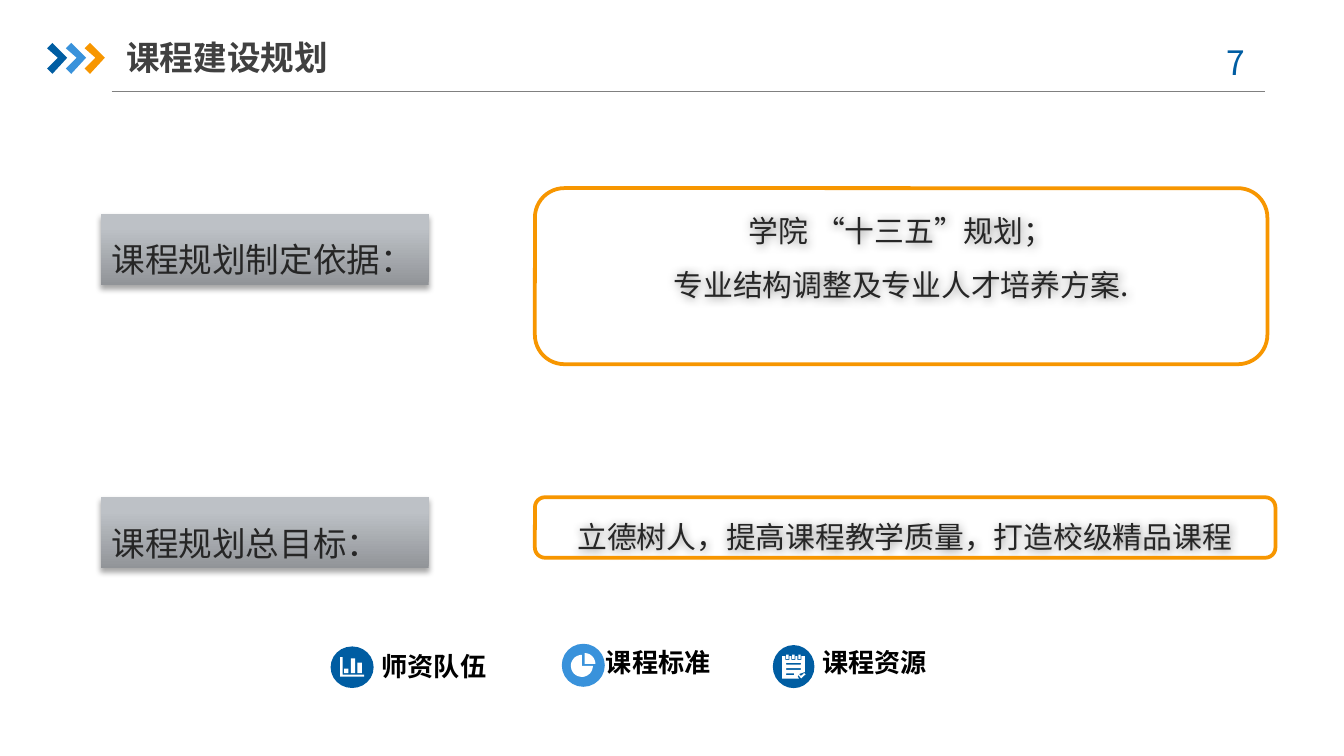
from dataclasses import dataclass
from math import cos, pi, sin

from lxml.etree import SubElement
from pptx import Presentation
from pptx.dml.color import RGBColor
from pptx.enum.shapes import MSO_CONNECTOR, MSO_SHAPE
from pptx.enum.text import MSO_ANCHOR, MSO_AUTO_SIZE, PP_ALIGN
from pptx.oxml import parse_xml
from pptx.oxml.ns import nsdecls, qn
from pptx.util import Pt

PX = 9144  # one hundredth of an inch


@dataclass(frozen=True)
class Theme:
    blue: str = "005DA2"
    sky: str = "3992DB"
    orange: str = "F79600"
    white: str = "FFFFFF"
    black: str = "000000"
    title: str = "404040"
    body: str = "262626"
    rule: str = "808080"
    metal: tuple = ((0, "919498"), (80, "BDC1C6"), (100, "BEC2C7"))
    cjk: str = "Noto Sans CJK SC"
    latin: str = "Calibri"
    big: int = 18
    medium: int = 16
    small: int = 14


T = Theme()


def px(*values):
    return [v * PX for v in values]


def rgb(color):
    return RGBColor.from_string(color)


def write(sp, lines, size, color, font=T.cjk, bold=False, align=None,
          spacing=None, margins=(10, 5, 10, 5), wrap=True,
          anchor=MSO_ANCHOR.TOP, grow=True):
    tf = sp.text_frame
    tf.text = "\n".join(lines)
    tf.word_wrap = wrap
    tf.vertical_anchor = anchor
    tf.auto_size = MSO_AUTO_SIZE.SHAPE_TO_FIT_TEXT if grow else MSO_AUTO_SIZE.NONE
    tf.margin_left, tf.margin_top, tf.margin_right, tf.margin_bottom = px(*margins)
    for p in tf.paragraphs:
        p.alignment = align
        p.line_spacing = spacing
        for r in p.runs:
            r.font.size, r.font.bold, r.font.name = Pt(size), bold, font
            r.font.color.rgb = rgb(color)
            if font == T.cjk:
                SubElement(r.font._element, qn("a:ea"), typeface=font)


def add_text(slide, box, lines, size, color, **style):
    sp = slide.shapes.add_textbox(*px(*box))
    write(sp, lines, size, color, **style)
    return sp


def add_shadow(sp, blur, distance, direction, alpha):
    sp.shadow.inherit = False
    effects = sp._element.spPr.find(qn("a:effectLst"))
    effects.append(parse_xml(
        f'<a:outerShdw {nsdecls("a")} blurRad="{Pt(blur)}" dist="{Pt(distance)}" '
        f'dir="{direction * 60000}" algn="ctr" rotWithShape="0">'
        f'<a:srgbClr val="{T.black}"><a:alpha val="{alpha * 1000}"/></a:srgbClr>'
        '</a:outerShdw>'))


def add_shape(slide, kind, box, fill=None, line=None):
    sp = slide.shapes.add_shape(kind, *px(*box))
    paint(sp, fill, line)
    return sp


def paint(sp, fill=None, line=None):
    sp.shadow.inherit = False
    if fill:
        sp.fill.solid()
        sp.fill.fore_color.rgb = rgb(fill)
    else:
        sp.fill.background()
    if line:
        sp.line.color.rgb = rgb(line)
        sp.line.width = Pt(2)
    else:
        sp.line.fill.background()


def add_outline(slide, left, top, contours, color, unit=PX):
    """Fill closed contours whose points are counted in `unit` from left, top."""
    builder = slide.shapes.build_freeform(*contours[0][0], scale=unit)
    for i, (start, *rest) in enumerate(contours):
        if i:
            builder.move_to(*start)
        builder.add_line_segments(rest, close=True)
    paint(builder.convert_to_shape(*px(left, top)), color)


def rect(x, y, w, h):
    return [(x, y), (x + w, y), (x + w, y + h), (x, y + h)]


def sector(cx, cy, radius, first, last):
    steps = 32
    angles = [pi / 180 * (first + (last - first) * i / steps) for i in range(steps + 1)]
    return [(cx, cy)] + [(round(cx + radius * cos(a)), round(cy + radius * sin(a)))
                         for a in angles]


def bars_icon():
    axes = [(0, 10), (20, 10), (20, 140), (180, 140), (180, 155), (0, 155)]
    bars = [rect(30 + 50 * i, 130 - h, 33, h) for i, h in enumerate((35, 110, 80))]
    return [axes] + bars


def pie_icon():
    return [sector(100, 80, 80, -90, 0), sector(80, 95, 82, 0, 270)]


def notepad_icon():
    rings = [30, 75, 120]
    top = [(0, 12)]
    for x in rings:
        top += [(x - 6, 12), (x - 6, 40), (x + 24, 40), (x + 24, 12)]
    page = top + [(170, 12), (170, 130), (125, 145), (115, 160), (125, 180), (0, 180)]
    text_lines = [rect(30, y, w, 14) for y, w in ((62, 110), (101, 110), (140, 60))]
    check = [(120, 153), (128, 147), (140, 160), (163, 138), (174, 147), (142, 178)]
    return [page, check] + text_lines + [rect(x, 0, 18, 32) for x in rings]


def add_header(slide, box, title, number):
    left, top, width, height = box
    chevron = [(0, 4), (4, 0), (15, 11), (4, 23), (0, 19), (8, 11)]
    for i, color in enumerate((T.blue, T.sky, T.orange)):
        add_outline(slide, left + 14 * i, top + 10, [chevron], color)
    rule = slide.shapes.add_connector(
        MSO_CONNECTOR.STRAIGHT,
        *px(left + 48, top + height, left + width, top + height))
    rule.line.color.rgb = rgb(T.rule)
    rule.line.width = Pt(0.75)
    SubElement(rule._element.spPr, qn("a:effectLst"))
    add_text(slide, (left + 59, top, 438, 41), [title], T.big, T.title, bold=True,
             margins=(0, 5, 0, 5), anchor=MSO_ANCHOR.MIDDLE, grow=False)
    add_text(slide, (left + 851, top + 4, 73, 40), [number], T.big, T.blue,
             align=PP_ALIGN.CENTER)


def add_heading(slide, box, text):
    sp = add_shape(slide, MSO_SHAPE.RECTANGLE, box, T.white)
    stops = "".join(f'<a:gs pos="{pos * 1000}"><a:srgbClr val="{color}"/></a:gs>'
                    for pos, color in T.metal)
    spPr = sp._element.spPr
    spPr.replace(spPr.find(qn("a:solidFill")), parse_xml(
        f'<a:gradFill {nsdecls("a")} rotWithShape="1"><a:gsLst>{stops}</a:gsLst>'
        '<a:lin ang="16200000" scaled="0"/></a:gradFill>'))
    add_shadow(sp, 3.1, 1.8, 90, 35)
    write(sp, [text], T.big, T.body, align=PP_ALIGN.JUSTIFY, spacing=1.5,
          margins=(8, 4, 8, 4))


def add_statement(slide, box, lines, text_top, text_height):
    left, top, width, height = box
    sp = add_text(slide, (left, text_top, width, text_height), lines, T.medium, T.body,
                  align=PP_ALIGN.CENTER, spacing=1.5)
    add_shadow(sp, 5, 0, 0, 45)
    add_shape(slide, MSO_SHAPE.ROUNDED_RECTANGLE, box, line=T.orange)


def add_badge(slide, box, color, contours, label, label_at):
    left, top, width, height = box
    add_shape(slide, MSO_SHAPE.OVAL, box, color)
    add_outline(slide, left + 7, top + 7, contours, T.white, PX / 10)
    add_text(slide, (*label_at, 99, 34), [label], T.small, T.black,
             font=T.latin, bold=True, wrap=False)


def main():
    prs = Presentation()
    prs.slide_width = 1000 * PX
    prs.slide_height = prs.slide_width * 9 // 16
    slide = prs.slides.add_slide(prs.slide_layouts[6])
    add_header(slide, (35, 22, 906, 46), "课程建设规划", "7 ")
    add_heading(slide, (75, 159, 244, 53), "课程规划制定依据：")
    add_heading(slide, (75, 370, 244, 53), "课程规划总目标：")
    add_statement(slide, (398, 140, 545, 131),
                  ["学院 “十三五”规划；", "专业结构调整及专业人才培养方案."], 140, 91)
    add_statement(slide, (398, 370, 551, 45),
                  ["立德树人，提高课程教学质量，打造校级精品课程"], 368, 46)
    badges = [
        ((246, 481, 32, 31), T.blue, bars_icon(), "师资队伍", (274, 479)),
        ((418, 479, 32, 32), T.sky, pie_icon(), "课程标准", (441, 476)),
        ((575, 480, 31, 32), T.blue, notepad_icon(), "课程资源", (602, 476)),
    ]
    for badge in badges:
        add_badge(slide, *badge)
    prs.save("out.pptx")


if __name__ == "__main__":
    main()
